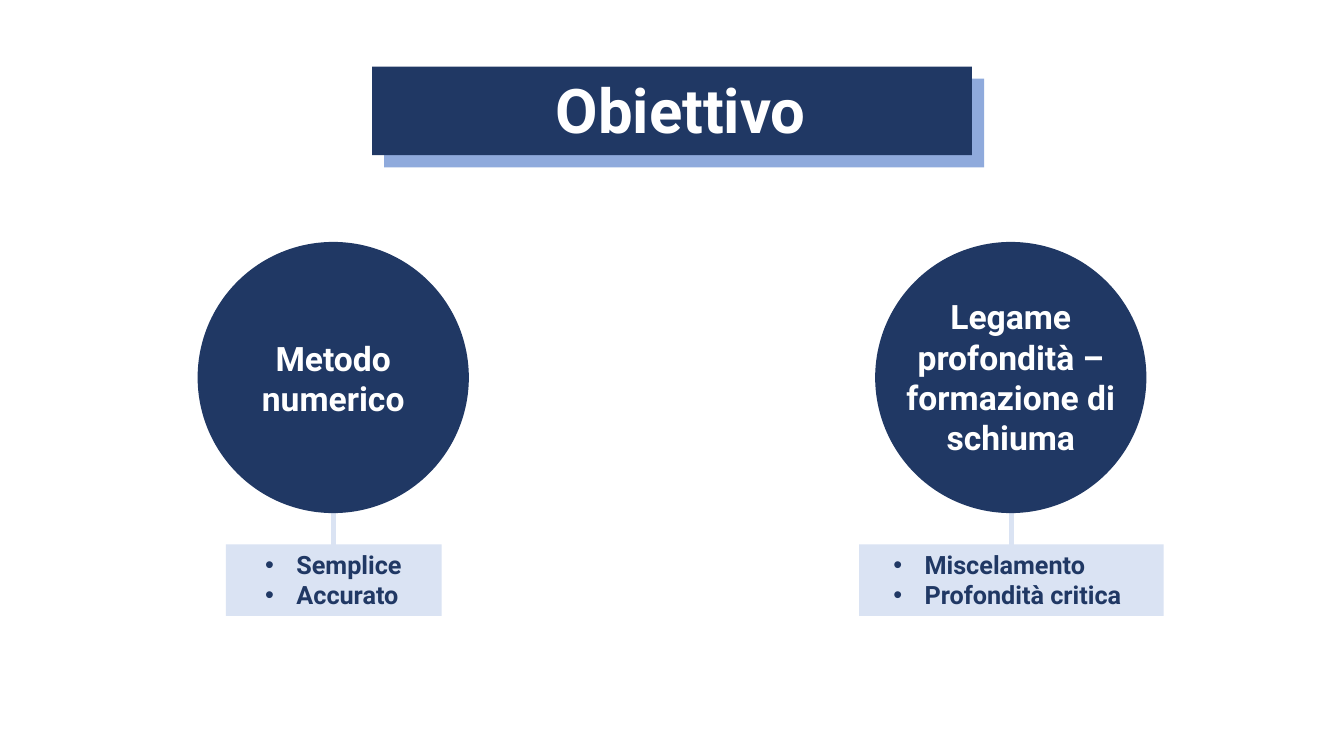
import pptx
import pptx.dml.color
import pptx.enum.shapes
import pptx.enum.text
import pptx.oxml
import pptx.oxml.ns
import pptx.util

PX = 9144  # EMU per px, 100 px to the inch
NAVY, BLUE, PALE, WHITE = "203864", "8FAADC", "DAE3F3", "FFFFFF"
FONT = "Roboto"
KIND = pptx.enum.shapes.MSO_SHAPE
ALIGN = pptx.enum.text.PP_ALIGN


def color(code):
    return pptx.dml.color.RGBColor.from_string(code)


def place(box, left, top, width, height):
    box.left, box.top = left * PX, top * PX
    box.width, box.height = width * PX, height * PX


def shape(slide, kind, area, fill):
    item = slide.shapes.add_shape(kind, *[n * PX for n in area])
    item.shadow.inherit = False
    item.fill.solid()
    item.fill.fore_color.rgb = color(fill)
    item.line.fill.background()


def stem(slide, x, top, end):
    line = slide.shapes.add_connector(
        pptx.enum.shapes.MSO_CONNECTOR.STRAIGHT, x * PX, top * PX, x * PX, end * PX)
    line.line.color.rgb = color(PALE)
    line.line.width = pptx.util.Pt(3.5)
    props = line._element.spPr
    props.append(props.makeelement(pptx.oxml.ns.qn("a:effectLst"), {}))


def write(box, lines, size, ink, align, bullet=False):
    frame = box.text_frame
    frame.word_wrap = True
    frame.auto_size = pptx.enum.text.MSO_AUTO_SIZE.NONE
    frame.vertical_anchor = pptx.enum.text.MSO_ANCHOR.TOP
    for i, text in enumerate(lines):
        para = frame.add_paragraph() if i else frame.paragraphs[0]
        para.alignment = align
        para.line_spacing = 1.0
        para.space_before = pptx.util.Pt(0)
        if bullet:
            props = para._p.get_or_add_pPr()
            props.set("marL", str(31 * PX))
            props.set("indent", str(-31 * PX))
            for tag, key, val in (("a:buFont", "typeface", "Arial"),
                                  ("a:buChar", "char", "•")):
                props.append(props.makeelement(pptx.oxml.ns.qn(tag), {key: val}))
        run = para.add_run()
        run.text = text
        run.font.name = FONT
        run.font.size = pptx.util.Pt(size)
        run.font.bold = True
        run.font.color.rgb = color(ink)


def label(slide, area, text):
    box = slide.shapes.add_textbox(*[n * PX for n in area])
    write(box, [text], 24, WHITE, ALIGN.CENTER)


def holder(slide, box, area):
    """Move a placeholder to its area, in front of the shapes."""
    place(box, *area)
    slide.shapes._spTree.append(box._element)
    return box


def main():
    deck = pptx.Presentation()
    deck.slide_width, deck.slide_height = 1333 * PX, 750 * PX
    slide = deck.slides.add_slide(deck.slide_layouts[3])
    heads = slide.placeholders

    # Title banner with its offset shade
    shape(slide, KIND.RECTANGLE, (381, 78, 595, 88), BLUE)
    shape(slide, KIND.RECTANGLE, (369, 66, 595, 88), NAVY)
    title = holder(slide, slide.shapes.title, (541, 66, 270, 84))
    write(title, ["Obiettivo"], 44, WHITE, ALIGN.LEFT)

    # Goals: circle left, label area, panel left and width, list left and width
    goals = [
        (196, (199, 330, 263, 91), "Metodo numerico",
         (224, 214), (253, 156), ["Semplice", "Accurato"]),
        (868, (879, 289, 247, 172), "Legame profondità – formazione di schiuma",
         (852, 302), (876, 253), ["Miscelamento", "Profondità critica"]),
    ]
    for i, (left, area, name, panel, rows, items) in enumerate(goals, 1):
        stem(slide, left + 135, 460, 596)
        shape(slide, KIND.RECTANGLE, (panel[0], 540, panel[1], 71), PALE)
        shape(slide, KIND.OVAL, (left, 240, 269, 269), NAVY)
        label(slide, area, name)
        body = holder(slide, heads[i], (rows[0], 540, rows[1], 71))
        write(body, items, 18, NAVY, ALIGN.LEFT, bullet=True)

    deck.save("out.pptx")


if __name__ == "__main__":
    main()
